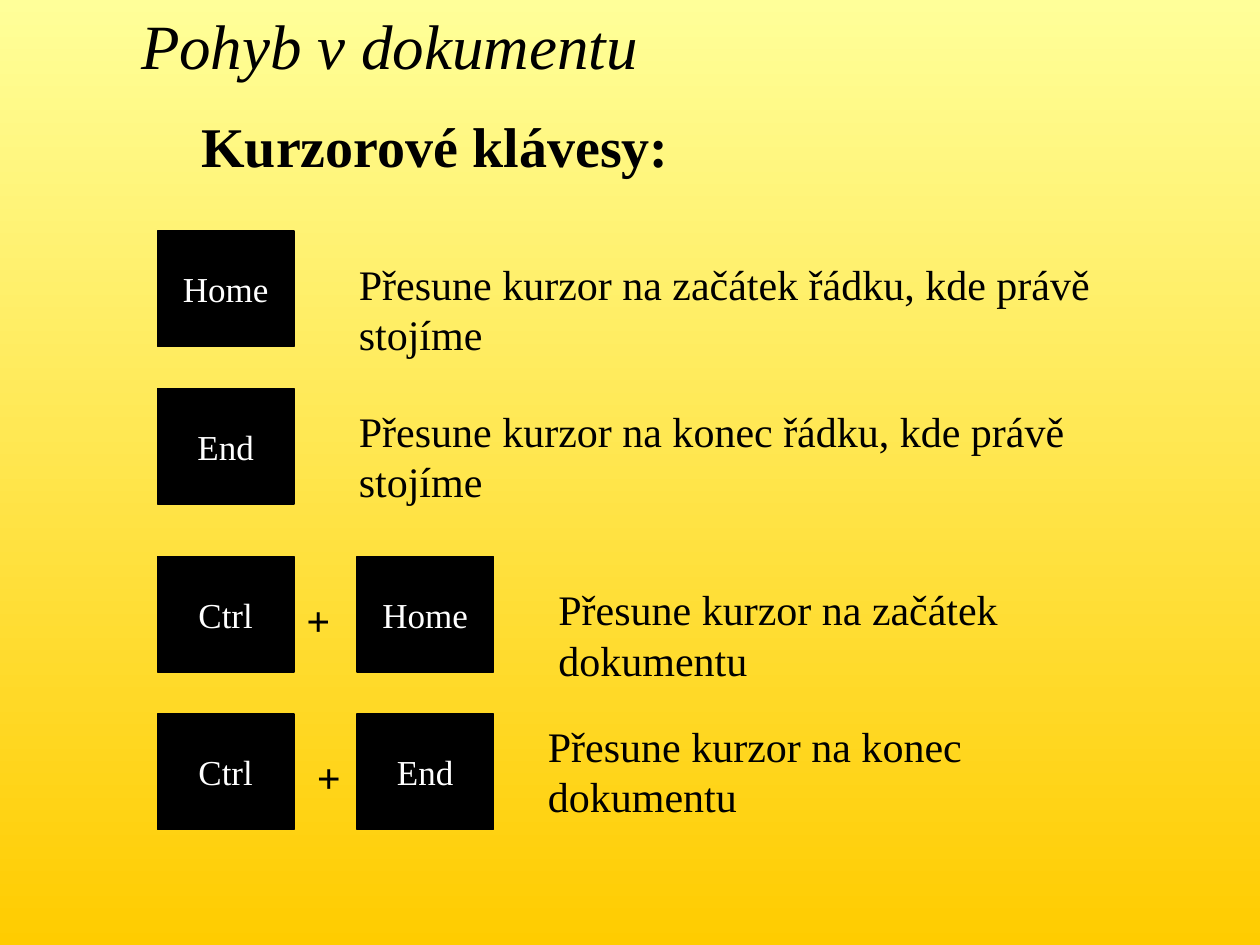
import pptx
import pptx.dml.color
import pptx.enum.shapes
import pptx.enum.text
import pptx.util

Pt = pptx.util.Pt
FONT = "Times New Roman"
COLORS = {"top": "FFFF99", "bottom": "FFCC00", "key": "000000",
          "key_text": "FFFFFF", "text": "000000"}
KEY_W, KEY_H = 78, 66
KEY_X = (90, 204)


def color(name):
    return pptx.dml.color.RGBColor.from_string(COLORS[name])


def set_background(s):
    fill = s.background.fill
    fill.gradient()
    fill.gradient_angle = 270
    for stop, name, position in zip(fill.gradient_stops, ("top", "bottom"), (0, 1)):
        stop.color.rgb = color(name)
        stop.position = position


def write(tf, text, size, name, bold=False, italic=False):
    tf.text = text
    p = tf.paragraphs[0]
    for r in p.runs:
        r.font.name = FONT
        r.font.size = Pt(size)
        r.font.bold = bold
        r.font.italic = italic
        r.font.color.rgb = color(name)
    return p


def add_key(s, x, y, label):
    sp = s.shapes.add_shape(pptx.enum.shapes.MSO_SHAPE.RECTANGLE,
                            Pt(x), Pt(y), Pt(KEY_W), Pt(KEY_H))
    sp.shadow.inherit = False
    sp.fill.solid()
    sp.fill.fore_color.rgb = color("key")
    sp.line.color.rgb = color("key")
    sp.line.width = Pt(0.75)
    tf = sp.text_frame
    tf.word_wrap = False
    tf.vertical_anchor = pptx.enum.text.MSO_ANCHOR.MIDDLE
    p = write(tf, label, 20, "key_text")
    p.alignment = pptx.enum.text.PP_ALIGN.CENTER


def add_text(s, x, y, w, h, text, size=24, bold=False, italic=False):
    sp = s.shapes.add_textbox(Pt(x), Pt(y), Pt(w), Pt(h))
    tf = sp.text_frame
    tf.word_wrap = True
    tf.auto_size = pptx.enum.text.MSO_AUTO_SIZE.SHAPE_TO_FIT_TEXT
    write(tf, text, size, "text", bold, italic)


def main():
    prs = pptx.Presentation()
    prs.slide_width, prs.slide_height = Pt(720), Pt(540)
    s = prs.slides.add_slide(prs.slide_layouts[6])
    set_background(s)

    add_text(s, 73.5, 0, 336, 50.5, "Pohyb v dokumentu", 36, italic=True)
    add_text(s, 108, 60, 486, 45.5, "Kurzorové klávesy:", 32, bold=True)

    shortcuts = [
        (132, ["Home"], (198, 144, 468),
         "Přesune kurzor na začátek řádku, kde právě stojíme"),
        (222, ["End"], (198, 228, 468),
         "Přesune kurzor na konec řádku, kde právě stojíme"),
        (318, ["Ctrl", "Home"], (312, 330, 318),
         "Přesune kurzor na začátek dokumentu"),
        (408, ["Ctrl", "End"], (306, 408, 318),
         "Přesune kurzor na konec dokumentu"),
    ]
    for key_y, keys, (x, y, w), text in shortcuts:
        for key_x, label in zip(KEY_X, keys):
            add_key(s, key_x, key_y, label)
        add_text(s, x, y, w, 65.5, text)

    for x, y in ((168, 336), (174, 426)):
        add_text(s, x, y, 36, 36, "+", bold=True)

    prs.save("out.pptx")


if __name__ == "__main__":
    main()
